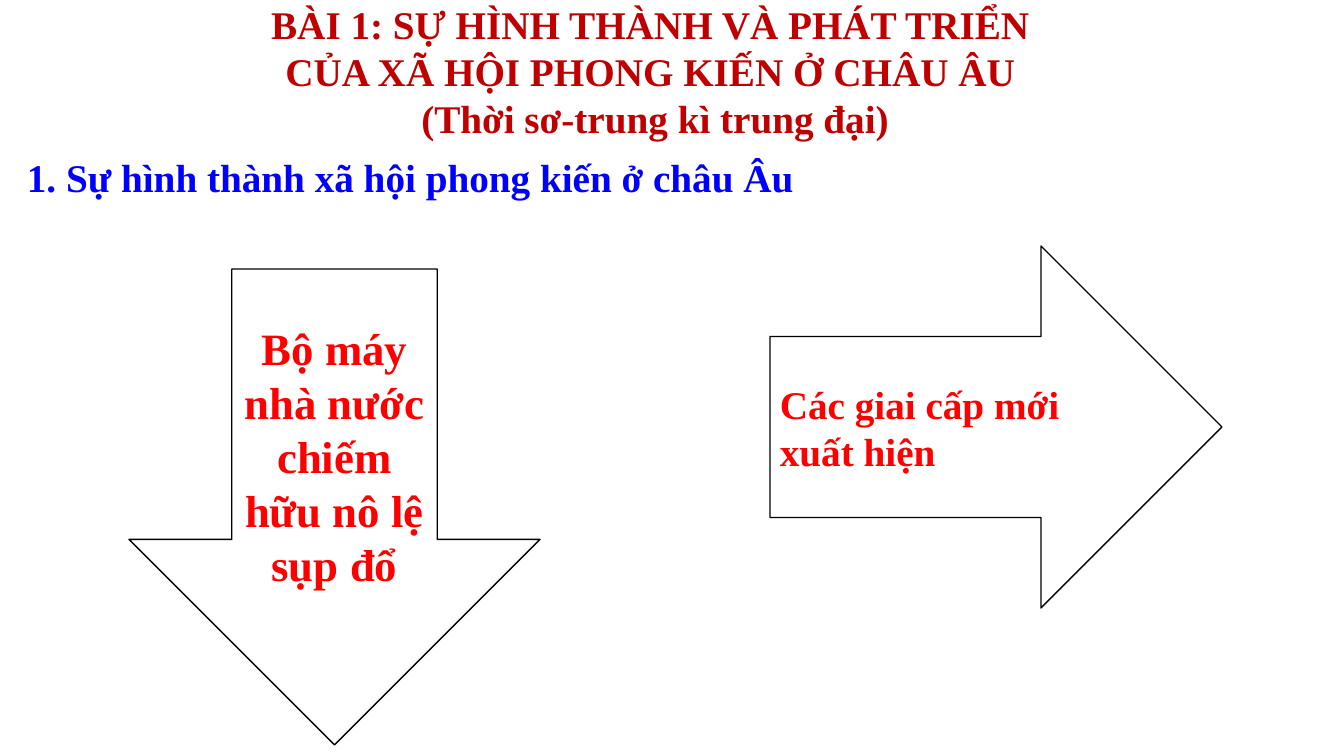
"""Build the lesson slide on the formation of feudal society in Europe."""
from dataclasses import dataclass

import pptx
import pptx.dml.color
import pptx.enum.shapes
import pptx.enum.text
import pptx.util

SHAPE = pptx.enum.shapes.MSO_SHAPE
ALIGN = pptx.enum.text.PP_ALIGN
ANCHOR = pptx.enum.text.MSO_ANCHOR

TITLE = ("BÀI 1: SỰ HÌNH THÀNH VÀ PHÁT TRIỂN \v"
         "CỦA XÃ HỘI PHONG KIẾN Ở CHÂU ÂU \v"
         "(Thời sơ-trung kì trung đại)")
HEADING = "1. Sự hình thành xã hội phong kiến ở châu Âu"
COLLAPSE = "Bộ máy nhà nước chiếm hữu nô lệ sụp đổ"
CLASSES = "Các giai cấp mới xuất hiện"

SLIDE_SIZE = (1344, 756)
TITLE_BOX = (-17, -5, 1344, 153)
HEADING_BOX = (17, 148, 810, 57)
ARROWS = [
    (SHAPE.DOWN_ARROW, (129, 269, 411, 476), COLLAPSE, 32, ALIGN.CENTER),
    (SHAPE.RIGHT_ARROW, (770, 246, 452, 362), CLASSES, 28, ALIGN.LEFT),
]


@dataclass(frozen=True)
class Theme:
    font: str = "Times New Roman"
    title: str = "C00000"
    heading: str = "0000FF"
    label: str = "FF0000"
    fill: str = "FFFFFF"
    line: str = "000000"
    size: int = 28


THEME = Theme()


def px(n):
    return pptx.util.Emu(round(n * 914400 / 100.8))


def rgb(value):
    return pptx.dml.color.RGBColor.from_string(value)


def write(sp, text, *, color, size=THEME.size, align=ALIGN.LEFT, anchor=ANCHOR.MIDDLE):
    tf = sp.text_frame
    tf.word_wrap = True
    tf.auto_size = pptx.enum.text.MSO_AUTO_SIZE.NONE
    tf.vertical_anchor = anchor
    p = tf.paragraphs[0]
    p.text = text
    p.alignment = align
    for r in p.runs:
        r.font.name = THEME.font
        r.font.size = pptx.util.Pt(size)
        r.font.bold = True
        r.font.color.rgb = rgb(color)


def add_arrow(slide, kind, box, text, size, align):
    sp = slide.shapes.add_shape(kind, *map(px, box))
    sp.shadow.inherit = False
    sp.fill.solid()
    sp.fill.fore_color.rgb = rgb(THEME.fill)
    sp.line.color.rgb = rgb(THEME.line)
    sp.line.width = pptx.util.Pt(1)
    write(sp, text, color=THEME.label, size=size, align=align)


def main():
    prs = pptx.Presentation()
    prs.slide_width, prs.slide_height = map(px, SLIDE_SIZE)
    slide = prs.slides.add_slide(prs.slide_layouts[5])

    title = slide.shapes.title
    title.left, title.top, title.width, title.height = map(px, TITLE_BOX)
    write(title, TITLE, color=THEME.title, align=ALIGN.CENTER, anchor=ANCHOR.TOP)

    heading = slide.shapes.add_textbox(*map(px, HEADING_BOX))
    write(heading, HEADING, color=THEME.heading, align=ALIGN.JUSTIFY)

    for arrow in ARROWS:
        add_arrow(slide, *arrow)

    prs.save("out.pptx")


if __name__ == "__main__":
    main()
